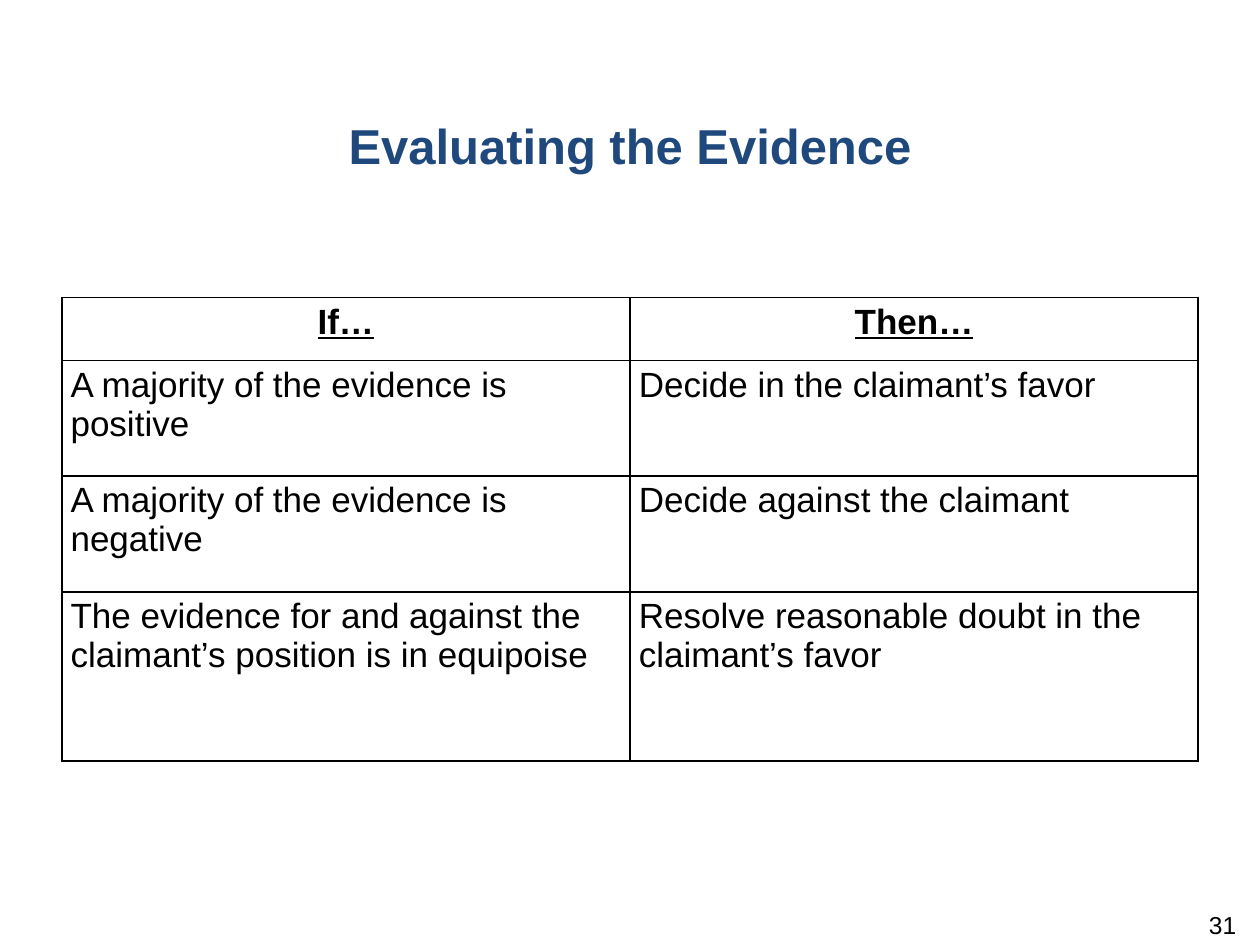
import dataclasses

import pptx
import pptx.dml.color
import pptx.enum.text
import pptx.oxml
import pptx.oxml.ns
import pptx.util

Inches = pptx.util.Inches
Align = pptx.enum.text.PP_ALIGN


@dataclasses.dataclass(frozen=True)
class Theme:
    font: str = "Arial"
    title_color: str = "1F497D"
    text_color: str = "000000"
    cell_color: str = "FFFFFF"
    border_color: str = "000000"
    title_size: int = 28
    table_size: int = 20
    number_size: int = 14
    border_width: int = 1


class SlideBuilder:
    def __init__(self, deck, theme):
        self.theme = theme
        self.slide = deck.slides.add_slide(deck.slide_layouts[6])

    def style(self, para, size, color, align, bold=False, underline=False):
        para.alignment = align
        for span in para.runs:
            span.font.name = self.theme.font
            span.font.size = pptx.util.Pt(size)
            span.font.bold = bold
            span.font.underline = underline
            span.font.color.rgb = pptx.dml.color.RGBColor.from_string(color)

    def text(self, text, left, top, width, height, size, color, align,
             bold=False, top_inset=0.05):
        box = self.slide.shapes.add_textbox(
            Inches(left), Inches(top), Inches(width), Inches(height))
        frame = box.text_frame
        frame.word_wrap = True
        frame.margin_top = Inches(top_inset)
        frame.vertical_anchor = pptx.enum.text.MSO_ANCHOR.TOP
        frame.text = text
        para = frame.paragraphs[0]
        para.space_after = pptx.util.Pt(6)
        self.style(para, size, color, align, bold)

    def border(self, cell):
        properties = cell._tc.get_or_add_tcPr()
        width = pptx.util.Pt(self.theme.border_width)
        for position, side in enumerate(("lnL", "lnR", "lnT", "lnB")):
            line = pptx.oxml.parse_xml(
                f'<a:{side} {pptx.oxml.ns.nsdecls("a")} w="{width}"><a:solidFill>'
                f'<a:srgbClr val="{self.theme.border_color}"/>'
                f'</a:solidFill></a:{side}>')
            properties.insert(position, line)

    def table(self, rows, left, top, widths, heights):
        table = self.slide.shapes.add_table(
            len(rows), len(widths), Inches(left), Inches(top),
            Inches(sum(widths)), Inches(sum(heights))).table
        for column, width in zip(table.columns, widths):
            column.width = Inches(width)
        for row, height in zip(table.rows, heights):
            row.height = Inches(height)
        for row_index, texts in enumerate(rows):
            header = row_index == 0
            align = Align.CENTER if header else Align.LEFT
            for column_index, text in enumerate(texts):
                cell = table.cell(row_index, column_index)
                cell.margin_left = cell.margin_right = Inches(0.07)
                cell.margin_top = cell.margin_bottom = Inches(0.04)
                cell.fill.solid()
                cell.fill.fore_color.rgb = pptx.dml.color.RGBColor.from_string(
                    self.theme.cell_color)
                self.border(cell)
                cell.text_frame.text = text
                self.style(cell.text_frame.paragraphs[0], self.theme.table_size,
                           self.theme.text_color, align, header, header)


def main():
    deck = pptx.Presentation()
    deck.slide_width = Inches(10)
    deck.slide_height = Inches(7.5)
    theme = Theme()
    page = SlideBuilder(deck, theme)

    page.text("Evaluating the Evidence", 0, 0.87, 10, 1.19,
              theme.title_size, theme.title_color, Align.CENTER, bold=True)
    page.text("31", 7.58, 7.22, 2.33, 0.4,
              theme.number_size, theme.text_color, Align.RIGHT, top_inset=0)

    decisions = [
        ("If…", "Then…"),
        ("A majority of the evidence is positive",
         "Decide in the claimant’s favor"),
        ("A majority of the evidence is negative",
         "Decide against the claimant"),
        ("The evidence for and against the claimant’s position is in equipoise",
         "Resolve reasonable doubt in the claimant’s favor"),
    ]
    page.table(decisions, 0.49, 2.36, [4.51] * 2, [0.5, 0.92, 0.92, 1.34])

    deck.save("out.pptx")


if __name__ == "__main__":
    main()
